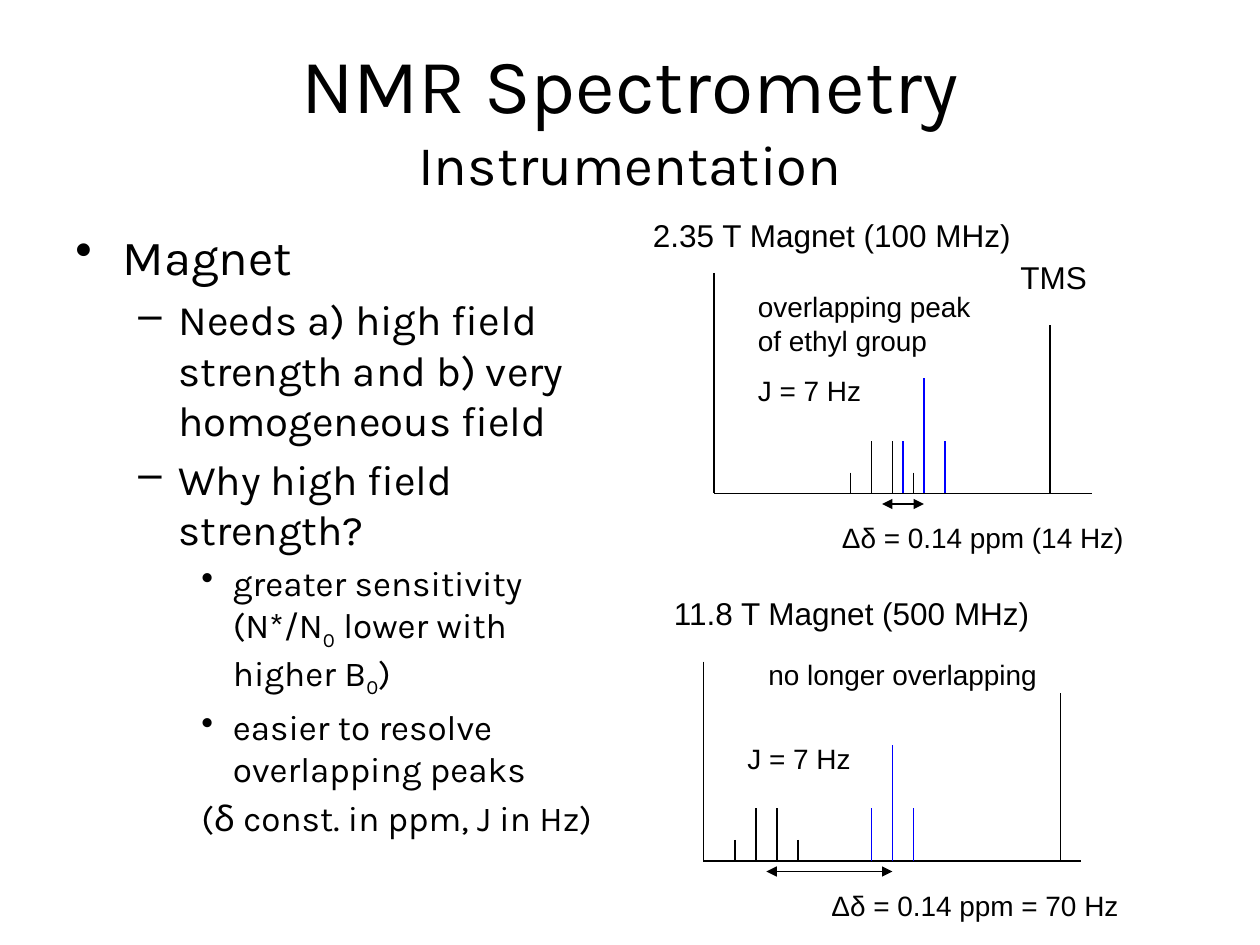
from dataclasses import dataclass
from lxml import etree
from pptx import Presentation
from pptx import util as u
from pptx.dml.color import RGBColor
from pptx.enum import shapes, text
from pptx.oxml.ns import qn

PX = 7620


@dataclass(frozen=True)
class Theme:
    black: RGBColor = RGBColor(0, 0, 0)
    blue: RGBColor = RGBColor(0, 0, 255)
    heading_font: str = "Karla"
    label_font: str = "Arial"
    title: int = 44
    subtitle: int = 32
    body: tuple = (28, 24, 20)
    caption: int = 18
    note: int = 16
    line: float = 0.75


THEME = Theme()

TITLE = [("NMR Spectrometry", THEME.title), ("Instrumentation", THEME.subtitle)]
LEVELS = [(45, 45), (98, 38), (150, 30)]
BODY = [
    (0, "•", ["Magnet"]),
    (1, "–", ["Needs a) high field strength and b) very homogeneous field"]),
    (1, "–", ["Why high field strength?"]),
    (2, "•", ["greater sensitivity (N*/N", "0", " lower with higher B", "0", ")"]),
    (2, "•", ["easier to resolve overlapping peaks"]),
    (2, None, ["(δ const. in ppm, J in Hz)"]),
]

QUARTET = [20, 50, 50, 20]
TRIPLET = [50, 110, 50]
PEAK_GAP = 20
AXIS_LENGTH = 360
SPECTRA = [
    dict(left=680, top=260, base=470, tms=(1000, 310), quartet=810, triplet=860),
    dict(left=670, top=630, base=820, tms=(1010, 660), quartet=700, triplet=830),
]
LABELS = [
    ("2.35 T Magnet (100 MHz)", THEME.caption, (610, 200, 400, 48)),
    ("TMS", THEME.caption, (960, 240, 140, 48)),
    ("overlapping peak of ethyl group", THEME.note, (710, 270, 240, 77)),
    ("J = 7 Hz", THEME.note, (710, 350, 150, 44)),
    ("Δδ = 0.14 ppm (14 Hz)", THEME.note, (790, 490, 340, 44)),
    ("11.8 T Magnet (500 MHz)", THEME.caption, (630, 560, 400, 48)),
    ("no longer overlapping", THEME.note, (720, 620, 290, 44)),
    ("J = 7 Hz", THEME.note, (700, 700, 150, 44)),
    ("Δδ = 0.14 ppm = 70 Hz", THEME.note, (780, 840, 340, 44)),
]


def add_box(slide, box):
    frame = slide.shapes.add_textbox(*(value * PX for value in box)).text_frame
    frame.word_wrap = True
    return frame


def add_run(paragraph, words, size, font):
    run = paragraph.add_run()
    run.text = words
    run.font.size = u.Pt(size)
    run.font.name = font
    run.font.color.rgb = THEME.black
    return run


def space_before(paragraph, percent):
    properties = paragraph._p.get_or_add_pPr()
    spacing = etree.SubElement(properties, qn("a:spcBef"))
    etree.SubElement(spacing, qn("a:spcPct"), val=str(percent * 1000))
    return properties


def add_title(slide):
    frame = add_box(slide, (60, 36, 1080, 150))
    frame.vertical_anchor = text.MSO_ANCHOR.MIDDLE
    paragraph = frame.paragraphs[0]
    paragraph.alignment = text.PP_ALIGN.CENTER
    for index, (words, size) in enumerate(TITLE):
        if index:
            paragraph.add_line_break()
        add_run(paragraph, words, size, THEME.heading_font)


def add_body(slide):
    frame = add_box(slide, (60, 210, 520, 594))
    for index, (level, bullet, parts) in enumerate(BODY):
        paragraph = frame.add_paragraph() if index else frame.paragraphs[0]
        paragraph.level = level
        properties = space_before(paragraph, 20)
        margin, hanging = LEVELS[level]
        properties.set("marL", str(margin * PX))
        properties.set("indent", str(-hanging * PX))
        if bullet:
            etree.SubElement(properties, qn("a:buChar"), char=bullet)
        else:
            etree.SubElement(properties, qn("a:buNone"))
        for part in parts:
            run = add_run(paragraph, part, THEME.body[level], THEME.heading_font)
            if part == "0":
                run.font._element.set("baseline", "-25000")


def add_line(slide, start, end, color=THEME.black, arrows=False):
    ends = (value * PX for value in (*start, *end))
    connector = slide.shapes.add_connector(shapes.MSO_CONNECTOR.STRAIGHT, *ends)
    connector.line.color.rgb = color
    connector.line.width = u.Pt(THEME.line)
    if arrows:
        for tag in ("a:headEnd", "a:tailEnd"):
            etree.SubElement(connector.line._get_or_add_ln(), qn(tag), type="triangle")
    etree.SubElement(connector._element.spPr, qn("a:effectLst"))


def add_spectrum(slide, left, top, base, tms, quartet, triplet):
    add_line(slide, (left, top), (left, base))
    add_line(slide, (left, base), (left + AXIS_LENGTH, base))
    add_line(slide, tms, (tms[0], base))
    centers = []
    for first, heights, color in (
        (quartet, QUARTET, THEME.black),
        (triplet, TRIPLET, THEME.blue),
    ):
        for index, height in enumerate(heights):
            x = first + index * PEAK_GAP
            add_line(slide, (x, base - height), (x, base), color)
        centers.append(first + (len(heights) - 1) * PEAK_GAP // 2)
    add_line(slide, (centers[0], base + 10), (centers[1], base + 10), arrows=True)


def add_label(slide, words, size, box):
    paragraph = add_box(slide, box).paragraphs[0]
    space_before(paragraph, 50)
    add_run(paragraph, words, size, THEME.label_font)


def main():
    presentation = Presentation()
    presentation.slide_width = 1200 * PX
    presentation.slide_height = 900 * PX
    slide = presentation.slides.add_slide(presentation.slide_layouts[6])
    add_title(slide)
    add_body(slide)
    for spectrum in SPECTRA:
        add_spectrum(slide, **spectrum)
    for label in LABELS:
        add_label(slide, *label)
    presentation.save("out.pptx")


if __name__ == "__main__":
    main()
